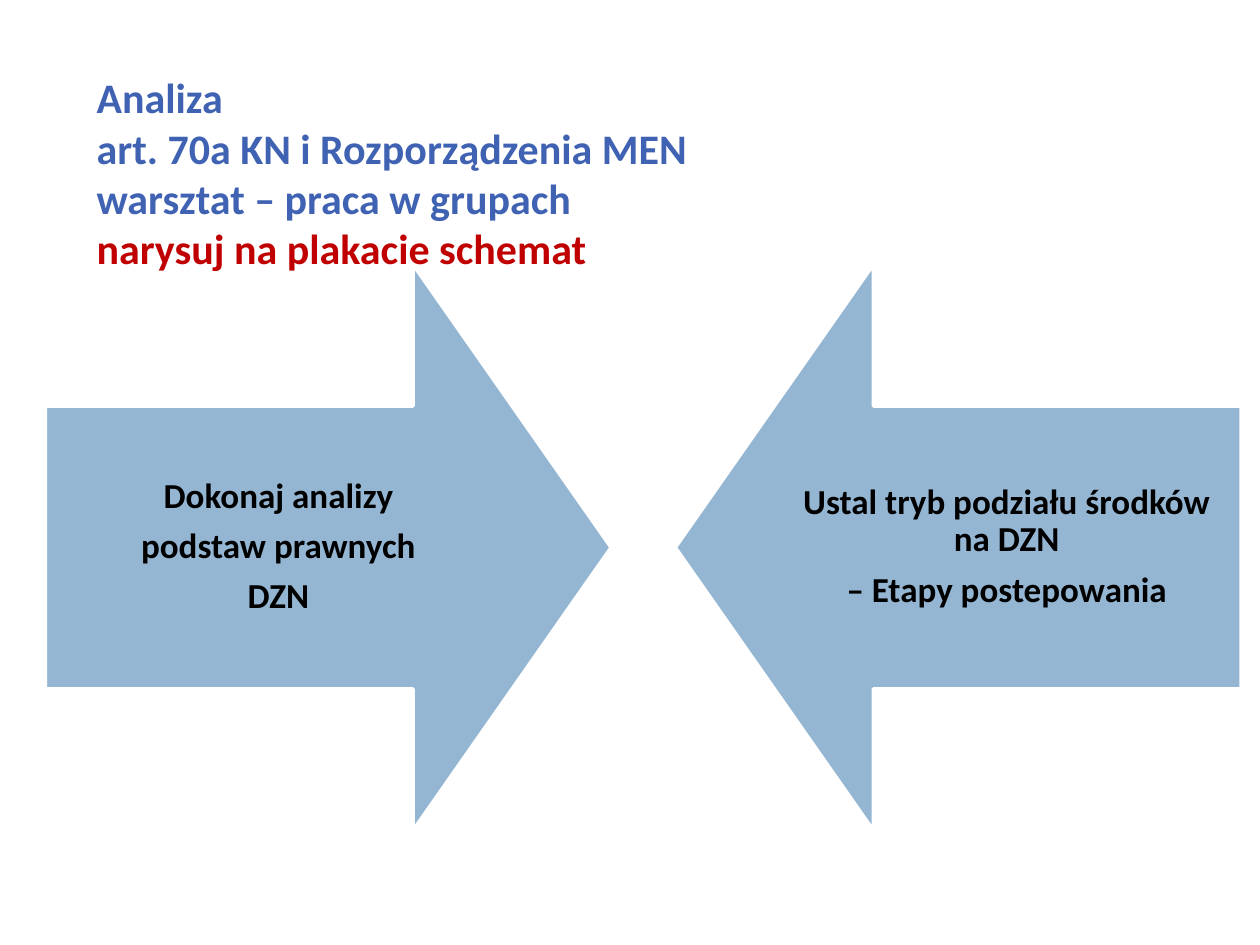
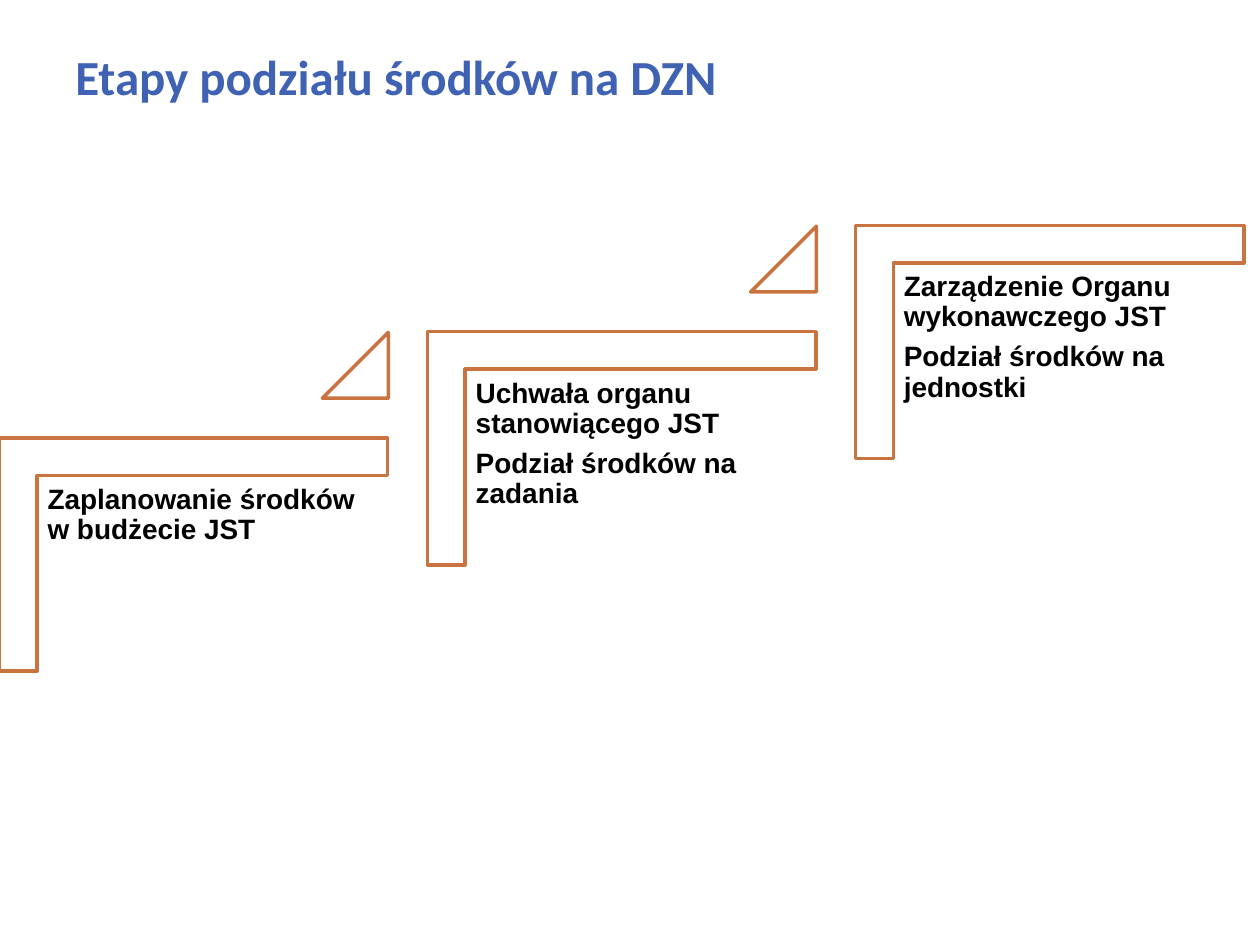
from dataclasses import dataclass

from pptx import Presentation
from pptx.dml.color import RGBColor
from pptx.enum import shapes, text
from pptx.util import Pt

BLUE, RED, BLACK, WHITE = "4062B3", "C00000", "000000", "FFFFFF"
STEEL, RUST = "94B6D2", "C97440"
KIND = shapes.MSO_SHAPE
LEFT, MID = text.PP_ALIGN.LEFT, text.PP_ALIGN.CENTER


@dataclass
class Box:
    x: float
    y: float
    w: float
    h: float


@dataclass
class Style:
    font: str
    size: float
    pad: float
    align: text.PP_ALIGN
    anchor: text.MSO_ANCHOR


@dataclass
class Arrow:
    x: float
    turn: int
    note: float
    lines: list[str]


LABEL = Style("Calibri", 20, 11.5, MID, text.MSO_ANCHOR.MIDDLE)
STAGE = Style("Arial", 16, 5, LEFT, text.MSO_ANCHOR.TOP)

ARROWS = [
    Arrow(25.9, 270, 25.9, ["Dokonaj analizy", "podstaw prawnych", "DZN"]),
    Arrow(385.9, 90, 442.1,
          ["Ustal tryb podziału środków na DZN", "– Etapy postepowania"]),
]
STAGES = [
    ["Zaplanowanie środków w budżecie JST"],
    ["Uchwała organu stanowiącego JST", "Podział środków na zadania"],
    ["Zarządzenie Organu wykonawczego JST", "Podział środków na jednostki"],
]
RUN, RISE = 244.65, 60.75


def paint(hue: str) -> RGBColor:
    return RGBColor.from_string(hue)


def place(box: Box) -> tuple:
    return Pt(box.x), Pt(box.y), Pt(box.w), Pt(box.h)


def write(para, words: str, font: str, size: float, hue: str) -> None:
    run = para.add_run()
    run.text = words
    run.font.name, run.font.size, run.font.bold = font, Pt(size), True
    run.font.color.rgb = paint(hue)


def frame(slide, box: Box, side: float, top: float):
    area = slide.shapes.add_textbox(*place(box)).text_frame
    area.word_wrap = True
    area.margin_left = area.margin_right = Pt(side)
    area.margin_top = area.margin_bottom = Pt(top)
    return area


def title(slide, box: Box, size: float, lines: list[tuple[str, str]]) -> None:
    """Set all lines in one paragraph, parted by line breaks."""
    para = frame(slide, box, 7.2, 5).paragraphs[0]
    for n, (words, hue) in enumerate(lines):
        if n:
            para.add_line_break()
        write(para, words, "Calibri", size, hue)


def note(slide, box: Box, lines: list[str], style: Style) -> None:
    area = frame(slide, box, style.pad, style.pad)
    area.vertical_anchor = style.anchor
    for n, words in enumerate(lines):
        para = area.add_paragraph() if n else area.paragraphs[0]
        para.alignment = style.align
        para.line_spacing = 0.9
        para.space_after = Pt(style.size * 0.35)
        write(para, words, style.font, style.size, BLACK)


def draw(slide, kind, box: Box, fill: str, line: str,
         bends: list[float], turn: int = 0) -> None:
    form = slide.shapes.add_shape(kind, *place(box))
    form.shadow.inherit = False
    form.rotation = turn
    form.fill.solid()
    form.fill.fore_color.rgb = paint(fill)
    form.line.color.rgb = paint(line)
    form.line.width = Pt(2)
    for n, bend in enumerate(bends):
        form.adjustments[n] = bend


def task(slide) -> None:
    title(slide, Box(48.2, 36, 636.5, 115.2), 24, [
        ("Analiza", BLUE),
        ("art. 70a KN i Rozporządzenia MEN", BLUE),
        ("warsztat – praca w grupach", BLUE),
        ("narysuj na plakacie schemat", RED),
    ])
    for arrow in ARROWS:
        draw(slide, KIND.DOWN_ARROW, Box(arrow.x, 151.2, 323.3, 323.3),
             STEEL, WHITE, [0.5, 0.35], arrow.turn)
        note(slide, Box(arrow.note, 231.8, 266.4, 161.3), arrow.lines, LABEL)


def steps(slide) -> None:
    title(slide, Box(36, 21.6, 607.7, 43.9), 28,
          [("Etapy podziału środków na DZN", BLUE)])
    for n, lines in enumerate(STAGES):
        x, y = n * RUN, -n * RISE
        draw(slide, KIND.CORNER, Box(x + 44, y + 206, 133.2, 221.8),
             WHITE, RUST, [0.161, 0.161], 90)
        note(slide, Box(x + 22.2, y + 272.3, 200.2, 175), lines, STAGE)
        if n < len(STAGES) - 1:
            draw(slide, KIND.ISOSCELES_TRIANGLE,
                 Box(x + 184.3, y + 190, 37.6, 37.6), WHITE, RUST, [1])


def main() -> None:
    deck = Presentation()
    deck.slide_width, deck.slide_height = Pt(720), Pt(540)
    for build in (task, steps):
        build(deck.slides.add_slide(deck.slide_layouts[6]))
    deck.save("out.pptx")


if __name__ == "__main__":
    main()
